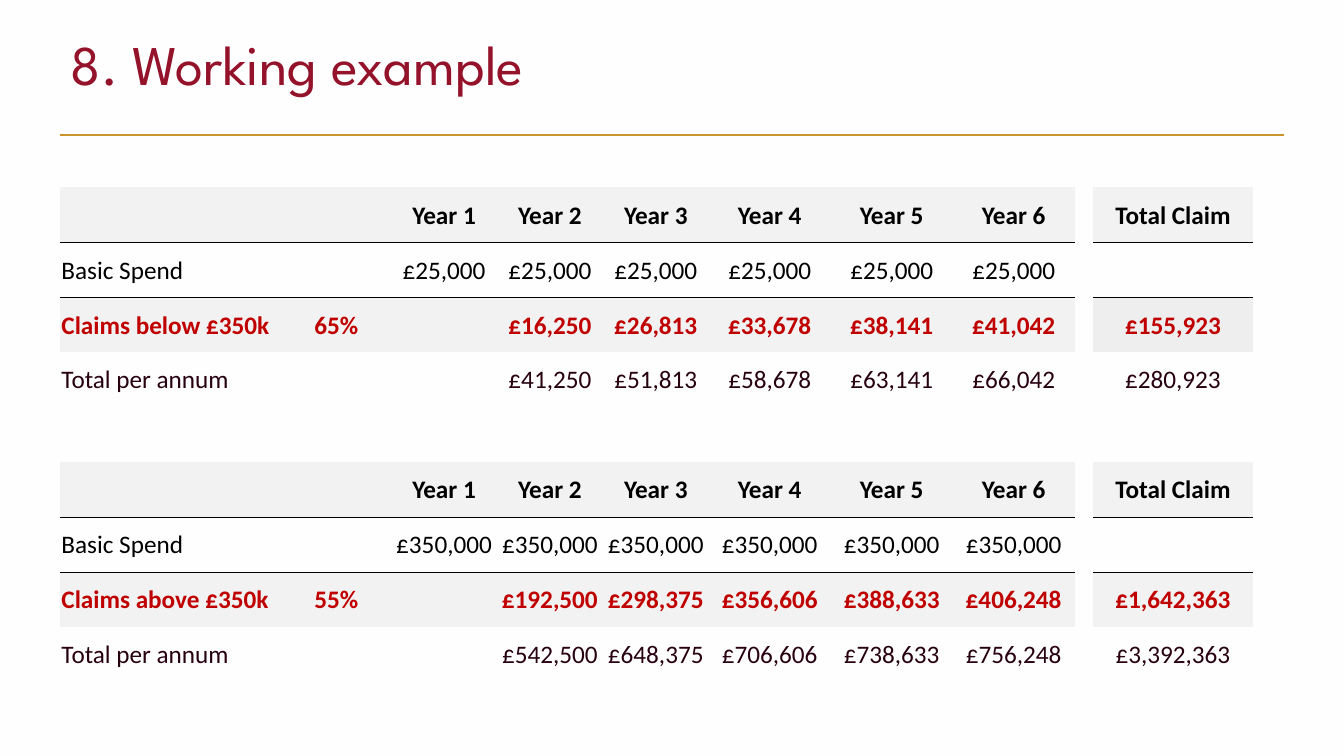
import pptx
import pptx.util
import pptx.dml.color
import pptx.enum.shapes
import pptx.enum.text
import pptx.oxml
import pptx.oxml.ns
from pptx.util import Inches

TITLE = "8. Working example"
HEADINGS = ["", "", "Year 1", "Year 2", "Year 3", "Year 4", "Year 5", "Year 6", "", "Total Claim"]
SCENARIOS = [
    {
        "spend": "£25,000",
        "claims": ["Claims below £350k", "65%", "", "£16,250", "£26,813", "£33,678",
                   "£38,141", "£41,042", "", "£155,923"],
        "totals": ["Total per annum", "", "", "£41,250", "£51,813", "£58,678",
                   "£63,141", "£66,042", "", "£280,923"],
        "claim_total_fill": "EEEEEE",
    },
    {
        "spend": "£350,000",
        "claims": ["Claims above £350k", "55%", "", "£192,500", "£298,375", "£356,606",
                   "£388,633", "£406,248", "", "£1,642,363"],
        "totals": ["Total per annum", "", "", "£542,500", "£648,375", "£706,606",
                   "£738,633", "£756,248", "", "£3,392,363"],
        "claim_total_fill": "F2F2F2",
    },
]

THEME = {
    "background": "FEFEFE", "title": "94122A", "rule": "C9942D", "band": "F2F2F2",
    "black": "000000", "claim": "C00000", "total": "280111",
    "title_font": "League Spartan", "table_font": "Calibri",
    "title_size": 40, "table_size": 18, "rule_width": 1.5, "border_width": 0.5,
}
LEFT, RULE_RIGHT, RULE_TOP = 0.6, 12.73, 1.34
TABLE_TOP, TABLE_HEIGHT = 1.86, 4.91
COLUMN_WIDTHS = [2.19, 1.09] + [1.05] * 3 + [1.21] * 3 + [0.18, 1.59]
GAP_COLUMN, TOTAL_COLUMN = 8, 9
NO_GRID_STYLE = "{2D5ABB26-0587-4C30-8999-92F81FD0307C}"


def rgb(name):
    return pptx.dml.color.RGBColor.from_string(THEME.get(name, name))


def add_run(paragraph, text, font, size, color, bold=False):
    run = paragraph.add_run()
    run.text = text
    run.font.name = THEME[font]
    run.font.size = pptx.util.Pt(THEME[size])
    run.font.color.rgb = rgb(color)
    run.font.bold = bold


def add_border(cell, side):
    """Draw a thin black line on one side of a cell: lnT or lnB."""
    width = pptx.util.Pt(THEME["border_width"])
    cell._tc.get_or_add_tcPr().insert(0, pptx.oxml.parse_xml(
        f'<a:{side} {pptx.oxml.ns.nsdecls("a")} w="{int(width)}"><a:solidFill>'
        f'<a:srgbClr val="{THEME["black"]}"/></a:solidFill></a:{side}>'))


def table_rows():
    """List each row as (texts, colour, bold, fill, total fill, border side)."""
    rows = []
    for scenario in SCENARIOS:
        if rows:
            rows.append(([""] * len(HEADINGS), "black", False, None, None, None))
        spend = ["Basic Spend", ""] + [scenario["spend"]] * 6 + ["", ""]
        rows += [
            (HEADINGS, "black", True, "band", "band", "lnB"),
            (spend, "black", False, None, None, "lnT"),
            (scenario["claims"], "claim", True, "band", scenario["claim_total_fill"], None),
            (scenario["totals"], "total", False, None, None, None),
        ]
    return rows


def fill_cell(cell, text, column, color, bold, fill, border):
    cell.vertical_anchor = pptx.enum.text.MSO_ANCHOR.MIDDLE
    cell.margin_left = cell.margin_right = cell.margin_top = Inches(0.01)
    cell.margin_bottom = 0
    if fill and column != GAP_COLUMN:
        cell.fill.solid()
        cell.fill.fore_color.rgb = rgb(fill)
    else:
        cell.fill.background()
    if border and column != GAP_COLUMN:
        add_border(cell, border)
    if text:
        paragraph = cell.text_frame.paragraphs[0]
        if column:
            paragraph.alignment = pptx.enum.text.PP_ALIGN.CENTER
        add_run(paragraph, text, "table_font", "table_size", color, bold)


def add_title(slide):
    frame = slide.shapes.add_textbox(Inches(LEFT), 0, Inches(9.41), Inches(RULE_TOP)).text_frame
    frame.word_wrap = True
    frame.vertical_anchor = pptx.enum.text.MSO_ANCHOR.MIDDLE
    frame.paragraphs[0].line_spacing = 0.9
    add_run(frame.paragraphs[0], TITLE, "title_font", "title_size", "title")


def add_rule(slide):
    rule = slide.shapes.add_connector(
        pptx.enum.shapes.MSO_CONNECTOR.STRAIGHT,
        Inches(LEFT), Inches(RULE_TOP), Inches(RULE_RIGHT), Inches(RULE_TOP))
    rule.line.color.rgb = rgb("rule")
    rule.line.width = pptx.util.Pt(THEME["rule_width"])
    rule._element.spPr.append(pptx.oxml.parse_xml(
        f'<a:effectLst {pptx.oxml.ns.nsdecls("a")}/>'))


def add_claims_table(slide):
    rows = table_rows()
    table = slide.shapes.add_table(
        len(rows), len(HEADINGS), Inches(LEFT), Inches(TABLE_TOP),
        Inches(sum(COLUMN_WIDTHS)), Inches(TABLE_HEIGHT)).table
    table.first_row = table.horz_banding = False
    table._tbl.tblPr.find(pptx.oxml.ns.qn("a:tableStyleId")).text = NO_GRID_STYLE
    for column, width in zip(table.columns, COLUMN_WIDTHS):
        column.width = Inches(width)
    for r, (texts, color, bold, fill, total_fill, border) in enumerate(rows):
        for c, text in enumerate(texts):
            cell_fill = total_fill if c == TOTAL_COLUMN else fill
            fill_cell(table.cell(r, c), text, c, color, bold, cell_fill, border)


def main():
    deck = pptx.Presentation()
    deck.slide_width, deck.slide_height = Inches(13.33), Inches(7.5)
    slide = deck.slides.add_slide(deck.slide_layouts[6])
    slide.background.fill.solid()
    slide.background.fill.fore_color.rgb = rgb("background")
    add_rule(slide)
    add_title(slide)
    add_claims_table(slide)
    deck.save("out.pptx")


if __name__ == "__main__":
    main()
